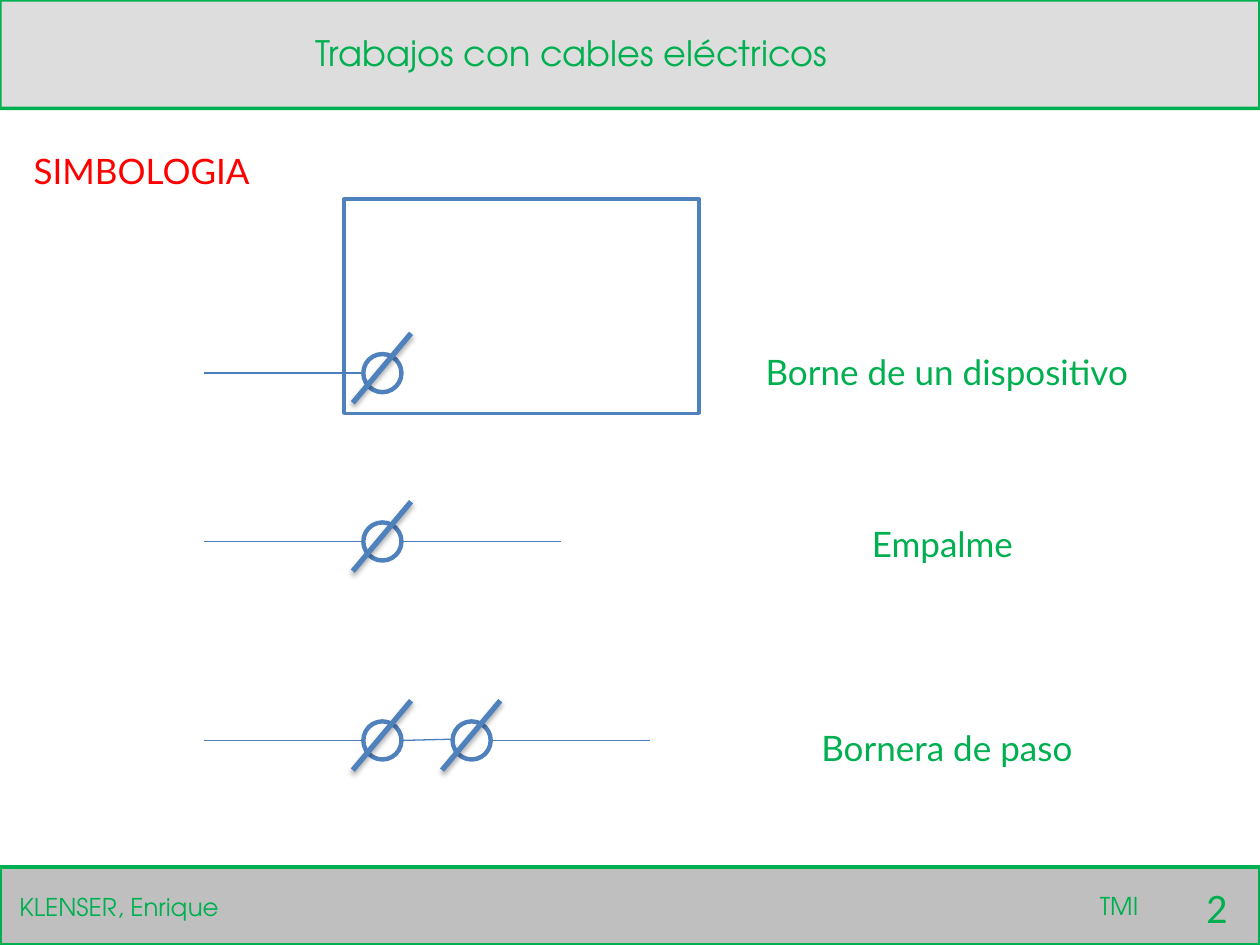
import lxml.etree
import pptx
import pptx.dml.color
import pptx.enum.shapes
import pptx.enum.text
import pptx.oxml
import pptx.oxml.ns
import pptx.util

Pt = pptx.util.Pt
SHAPE = pptx.enum.shapes.MSO_SHAPE
ALIGN = pptx.enum.text.PP_ALIGN
ANCHOR = pptx.enum.text.MSO_ANCHOR

COLORS = {
    "green": "00B050", "red": "FF0000", "header": "D9D9D9", "footer": "BFBFBF",
    "white": "FFFFFF", "symbol": "4F81BD", "wire": "4B7EBC",
}
HEADING_FONT, LABEL_FONT, NUMBER_FONT = "TeX Gyre Adventor", "Lato", "Calibri"

TITLE = ("Trabajos con cables eléctricos", (172.8, 14.4, 338.4, 31.7))
BANDS = [
    ((0, 0, 720, 61.9), "header", 0.003),
    ((0, 495.4, 720, 44.6), "footer", 0),
]
FOOTER_TEXTS = [
    ("2", (527, 495.4, 181.4, 45.4), NUMBER_FONT, 24, ALIGN.RIGHT),
    ("KLENSER, Enrique", (4, 506, 196.6, 24.5), HEADING_FONT, 14, ALIGN.LEFT),
    ("TMI", (621.4, 505.4, 196.6, 24.5), HEADING_FONT, 14, ALIGN.LEFT),
]
DEVICE = (196.6, 113.8, 203, 122.4)
LABEL_SIZE = (226.8, 31.7)
LABELS = [
    ("SIMBOLOGIA ", -30.2, 82.1, "red"),
    ("Borne de un dispositivo", 427.7, 196.6, "green"),
    ("Empalme ", 427.7, 295.2, "green"),
    ("Bornera de paso", 427.7, 411.8, "green"),
]
SYMBOL_ROWS = [
    {"y": 213.2, "terminals": 1, "outgoing": False},
    {"y": 309.4, "terminals": 1, "outgoing": True},
    {"y": 423.1, "terminals": 2, "outgoing": True},
]
FIRST_X, TERMINAL_STEP = 218.5, 51
DIAMETER, WIRE_LENGTH, LINK_RISE = 22.3, 91, 0.7
RADIUS = DIAMETER / 2


def color(name):
    return pptx.dml.color.RGBColor.from_string(COLORS[name])


def add_outlined(page, kind, bounds, fill, line, adjustment=None):
    shape = page.shapes.add_shape(kind, *map(Pt, bounds))
    shape.shadow.inherit = False
    shape.fill.solid()
    shape.fill.fore_color.rgb = color(fill)
    shape.line.color.rgb = color(line)
    shape.line.width = Pt(2)
    if adjustment is not None:
        shape.adjustments[0] = adjustment
    return shape


def format_text(box, text, font, size, tint, align):
    box.text_frame.text = text
    box.text_frame.word_wrap = True
    para = box.text_frame.paragraphs[0]
    para.alignment = align
    para.font.name = font
    para.font.size = Pt(size)
    para.font.color.rgb = color(tint)


def add_text(page, text, bounds, font, size, tint, align):
    box = page.shapes.add_textbox(*map(Pt, bounds))
    format_text(box, text, font, size, tint, align)
    return box


def add_line(page, start, end, tint="wire", width=0.75):
    line = page.shapes.add_connector(
        pptx.enum.shapes.MSO_CONNECTOR.STRAIGHT, *map(Pt, start + end))
    line.line.color.rgb = color(tint)
    line.line.width = Pt(width)
    properties = line._element.spPr
    return lxml.etree.SubElement(properties, pptx.oxml.ns.qn("a:effectLst"))


def add_terminal(page, x, y):
    add_outlined(page, SHAPE.DONUT, (x - RADIUS, y - RADIUS, DIAMETER, DIAMETER),
                 "symbol", "symbol", 0.023)
    effects = add_line(page, (x - 16.9, y + 17), (x + 16.4, y - 22.7), "symbol", 3)
    effects.append(pptx.oxml.parse_xml(
        f'<a:outerShdw {pptx.oxml.ns.nsdecls("a")} blurRad="{Pt(3.1)}" dist="{Pt(1.8)}" '
        'dir="5400000" rotWithShape="0"><a:srgbClr val="000000">'
        '<a:alpha val="35000"/></a:srgbClr></a:outerShdw>'))


def add_symbol_row(page, y, terminals, outgoing):
    centers = [FIRST_X + TERMINAL_STEP * index for index in range(terminals)]
    left, right = centers[0] - RADIUS, centers[-1] + RADIUS
    add_line(page, (left - WIRE_LENGTH, y), (left, y))
    for x in centers:
        add_terminal(page, x, y)
    for before, after in zip(centers, centers[1:]):
        add_line(page, (before + RADIUS, y), (after - RADIUS, y - LINK_RISE))
    if outgoing:
        add_line(page, (right, y), (right + WIRE_LENGTH, y))


def main():
    deck = pptx.Presentation()
    deck.slide_width, deck.slide_height = Pt(720), Pt(540)
    page = deck.slides.add_slide(deck.slide_layouts[5])

    bands = [add_outlined(page, SHAPE.ROUNDED_RECTANGLE, bounds, fill, "green", corner)
             for bounds, fill, corner in BANDS]
    header_color = bands[0]._element.spPr.find(".//" + pptx.oxml.ns.qn("a:srgbClr"))
    lxml.etree.SubElement(header_color, pptx.oxml.ns.qn("a:alpha"), val="88000")

    title = page.shapes.title
    text, bounds = TITLE
    title.left, title.top, title.width, title.height = map(Pt, bounds)
    format_text(title, text, HEADING_FONT, 20, "green", ALIGN.LEFT)
    title.text_frame.vertical_anchor = ANCHOR.TOP
    bands[-1]._element.addnext(title._element)

    for text, bounds, font, size, align in FOOTER_TEXTS:
        box = add_text(page, text, bounds, font, size, "green", align)
        box.text_frame.vertical_anchor = ANCHOR.MIDDLE

    add_outlined(page, SHAPE.RECTANGLE, DEVICE, "white", "symbol")
    for row in SYMBOL_ROWS:
        add_symbol_row(page, **row)
    for text, left, top, tint in LABELS:
        add_text(page, text, (left, top, *LABEL_SIZE), LABEL_FONT, 20, tint, ALIGN.CENTER)

    deck.save("out.pptx")


if __name__ == "__main__":
    main()
